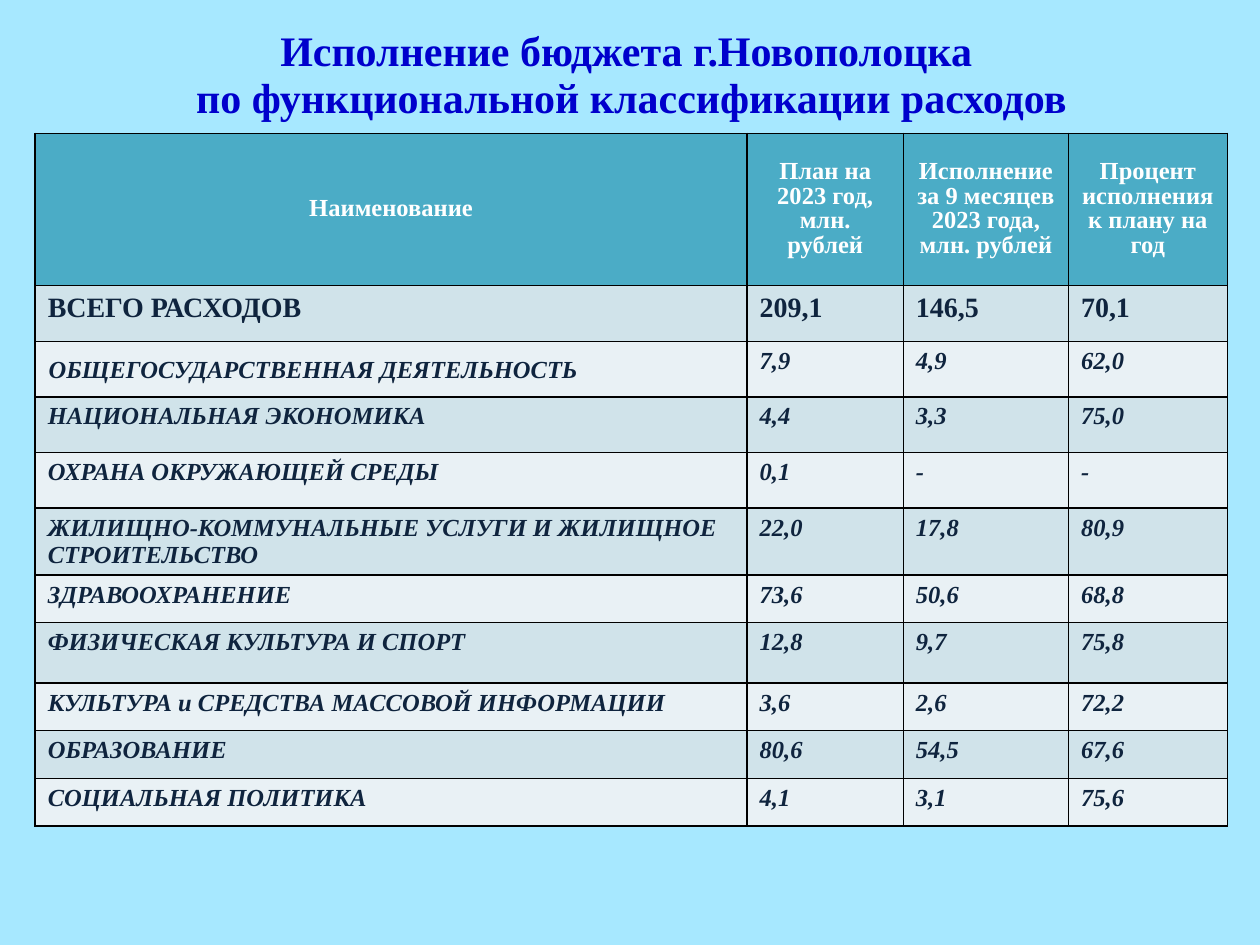
from pptx import Presentation
from pptx.dml.color import RGBColor
from pptx.enum.text import MSO_ANCHOR as Anchor, MSO_AUTO_SIZE as AutoSize, PP_ALIGN as Align
from pptx.oxml import parse_xml
from pptx.oxml.ns import nsdecls
from pptx.util import Cm, Pt

SKY = RGBColor(0xA7, 0xE8, 0xFF)
BLUE = RGBColor(0x00, 0x00, 0xCC)
TEAL = RGBColor(0x4B, 0xAC, 0xC6)
WHITE = RGBColor(0xFF, 0xFF, 0xFF)
NAVY = RGBColor(0x0F, 0x24, 0x3E)
BLACK = RGBColor(0x00, 0x00, 0x00)
BANDS = (RGBColor(0xD0, 0xE3, 0xEA), RGBColor(0xE9, 0xF1, 0xF5))

TITLE = "Исполнение бюджета г.Новополоцка \vпо функциональной классификации расходов"
HEADERS = (
    "Наименование",
    "План на 2023 год, млн. рублей",
    "Исполнение за 9 месяцев 2023 года, млн. рублей",
    "Процент исполнения к плану на год",
)
COLUMN_WIDTHS = (14.35, 3.15, 3.33, 3.2)
HEADER_HEIGHT = 3.07
# Each row: height in cm, name, plan, execution, percent
EXPENSES = (
    (1.12, "ВСЕГО РАСХОДОВ", "209,1", "146,5", "70,1"),
    (1.12, "ОБЩЕГОСУДАРСТВЕННАЯ ДЕЯТЕЛЬНОСТЬ", "7,9", "4,9", "62,0"),
    (1.12, "НАЦИОНАЛЬНАЯ ЭКОНОМИКА", "4,4", "3,3", "75,0"),
    (1.12, "ОХРАНА ОКРУЖАЮЩЕЙ СРЕДЫ", "0,1", "-", "-"),
    (1.35, "ЖИЛИЩНО-КОММУНАЛЬНЫЕ УСЛУГИ И ЖИЛИЩНОЕ СТРОИТЕЛЬСТВО",
     "22,0", "17,8", "80,9"),
    (0.96, "ЗДРАВООХРАНЕНИЕ", "73,6", "50,6", "68,8"),
    (1.22, "ФИЗИЧЕСКАЯ КУЛЬТУРА И СПОРТ", "12,8", "9,7", "75,8"),
    (0.96, "КУЛЬТУРА и СРЕДСТВА МАССОВОЙ ИНФОРМАЦИИ", "3,6", "2,6", "72,2"),
    (0.96, "ОБРАЗОВАНИЕ", "80,6", "54,5", "67,6"),
    (0.96, "СОЦИАЛЬНАЯ ПОЛИТИКА", "4,1", "3,1", "75,6"),
)


def set_attributes(target, values):
    for name, value in values.items():
        setattr(target, name, value)


def write_text(frame, text, color, size, italic=False, **para_format):
    para = frame.paragraphs[0]
    para.text = text
    set_attributes(para, para_format)
    for span in para.runs:
        set_attributes(span.font, {"name": "Times New Roman", "size": Pt(size),
                                   "bold": True, "italic": italic})
        span.font.color.rgb = color


def add_borders(cell):
    """Draw the four cell borders; call before filling, as lines precede the fill."""
    properties = cell._tc.get_or_add_tcPr()
    for side in "LRTB":
        properties.append(parse_xml(
            f'<a:ln{side} {nsdecls("a")} w="{Pt(1)}"><a:solidFill>'
            f'<a:srgbClr val="{BLACK}"/></a:solidFill></a:ln{side}>'))


def paint_cell(cell, color):
    add_borders(cell)
    cell.fill.solid()
    cell.fill.fore_color.rgb = color


def add_title(page):
    title = page.shapes.title
    set_attributes(title, {"left": Cm(1.3), "top": Cm(0.33),
                           "width": Cm(22.86), "height": Cm(2.36)})
    set_attributes(title.text_frame, {"auto_size": AutoSize.NONE, "word_wrap": True,
                                      "vertical_anchor": Anchor.MIDDLE})
    write_text(title.text_frame, TITLE, BLUE, 24,
               alignment=Align.CENTER, line_spacing=Pt(27))


def fill_header(table):
    for column, text in enumerate(HEADERS):
        cell = table.cell(0, column)
        paint_cell(cell, TEAL)
        cell.vertical_anchor = Anchor.MIDDLE
        write_text(cell.text_frame, text, WHITE, 14,
                   alignment=Align.CENTER, line_spacing=Pt(14))


def fill_expenses(table):
    for index, (_, *values) in enumerate(EXPENSES):
        is_total = index == 0
        for column, text in enumerate(values):
            cell = table.cell(index + 1, column)
            paint_cell(cell, BANDS[index % 2])
            write_text(cell.text_frame, text, NAVY,
                       16 if is_total else 14, italic=not is_total)
    set_attributes(table.cell(2, 0), {
        "vertical_anchor": Anchor.MIDDLE, "margin_left": Cm(0.27),
        "margin_top": Cm(0.03), "margin_bottom": Cm(0)})


def add_budget_table(page):
    heights = [HEADER_HEIGHT] + [row[0] for row in EXPENSES]
    table = page.shapes.add_table(
        len(heights), len(HEADERS), Cm(0.71), Cm(2.69),
        Cm(sum(COLUMN_WIDTHS)), Cm(sum(heights))).table
    for column, width in zip(table.columns, COLUMN_WIDTHS):
        column.width = Cm(width)
    for row, height in zip(table.rows, heights):
        row.height = Cm(height)
    fill_header(table)
    fill_expenses(table)


def main():
    deck = Presentation()
    set_attributes(deck, {"slide_width": Cm(25.4), "slide_height": Cm(19.05)})
    page = deck.slides.add_slide(deck.slide_layouts.get_by_name("Title Only"))
    page.background.fill.solid()
    page.background.fill.fore_color.rgb = SKY
    add_title(page)
    add_budget_table(page)
    deck.save("out.pptx")


if __name__ == "__main__":
    main()
